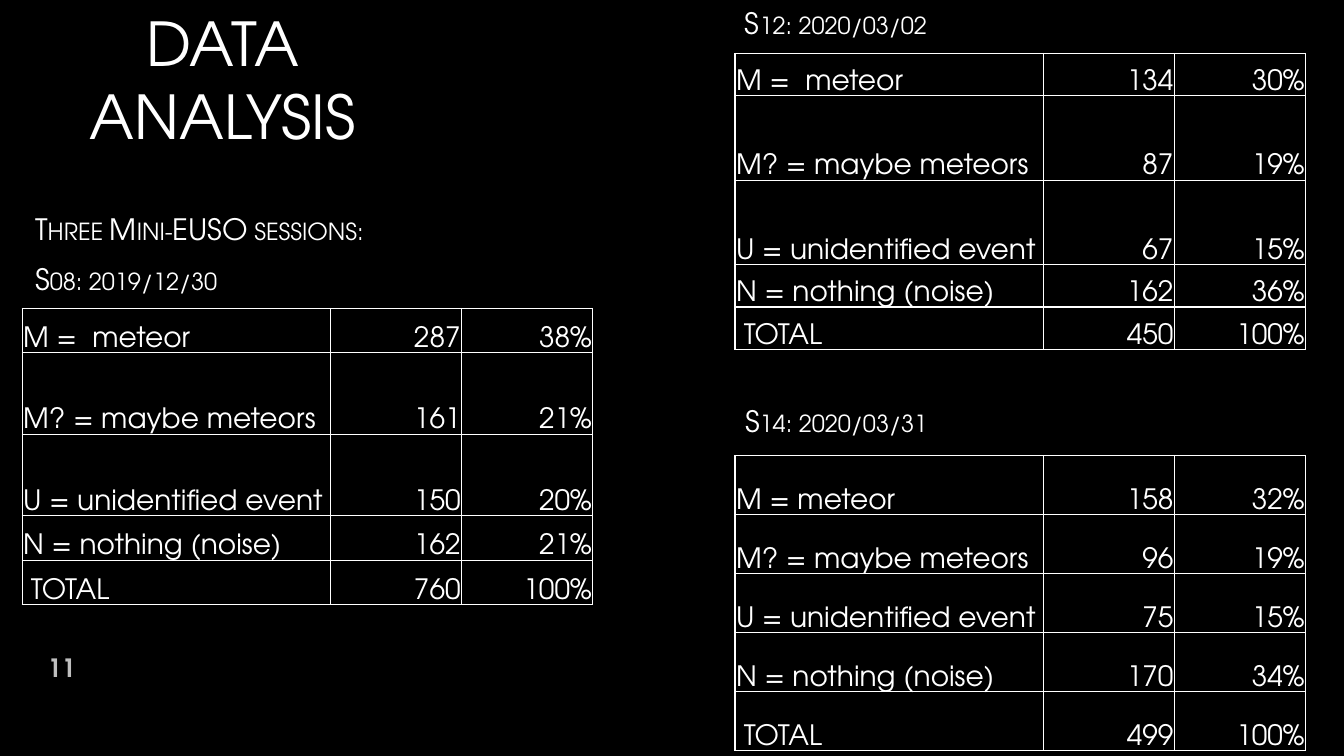
"""Builds the data analysis slide with its three session tables."""
from lxml import etree
from pptx import Presentation
from pptx.dml.color import RGBColor
from pptx.enum.text import MSO_ANCHOR, MSO_AUTO_SIZE, PP_ALIGN
from pptx.oxml.ns import qn
from pptx.util import Inches, Pt

LEFT, CENTER, RIGHT = PP_ALIGN.LEFT, PP_ALIGN.CENTER, PP_ALIGN.RIGHT
TOP, MIDDLE, BOTTOM = MSO_ANCHOR.TOP, MSO_ANCHOR.MIDDLE, MSO_ANCHOR.BOTTOM
NO_AUTOFIT = MSO_AUTO_SIZE.NONE
COLORS = {"background": "000000", "text": "FFFFFF", "number": "BFBFBF"}
FONT = "TeX Gyre Adventor"
WIDTH, HEIGHT = Inches(13.33), Inches(7.5)
COLUMN_X = (1.65, 54.69)
CAPTION_X = (1.88, 54.69)
CAPTION_W = 31.28
TABLE_W = 42.46
COLUMN_SHARES = (0.54, 0.23, 0.23)
LABELS = ("M =  meteor", "M? = maybe meteors", "U = unidentified event",
          "N = nothing (noise)", " TOTAL")


def box(x, y, w, h):
    """Turn percentages of the slide into left, top, width and height."""
    return (int(WIDTH * x / 100), int(HEIGHT * y / 100),
            int(WIDTH * w / 100), int(HEIGHT * h / 100))


def style(p, size, align, color="text", bold=False):
    """Align a paragraph and format its runs."""
    p.alignment = align
    for r in p.runs:
        r.font.name = FONT
        r.font.size = Pt(size)
        r.font.bold = bold
        r.font.color.rgb = RGBColor.from_string(COLORS[color])


def place(sp, area, text, anchor):
    """Position a text shape, fill in its text and return its frame."""
    sp.left, sp.top, sp.width, sp.height = box(*area)
    tf = sp.text_frame
    tf.text = text
    tf.word_wrap = True
    tf.auto_size = NO_AUTOFIT
    tf.vertical_anchor = anchor
    return tf


def add_textbox(slide):
    """Add a text box to be placed later."""
    return slide.shapes.add_textbox(0, 0, 0, 0)


def write_caption(sp, area, text):
    """Write session captions in small capitals."""
    for p in place(sp, area, text, TOP).paragraphs:
        style(p, 21, LEFT)
        p.space_before, p.space_after = Pt(4.2), Pt(6)
        for r in p.runs:
            r.font._element.set("cap", "small")


def set_borders(cell):
    """Draw thin lines on all four sides of a cell."""
    tc_pr = cell._tc.get_or_add_tcPr()
    for i, side in enumerate(("lnL", "lnR", "lnT", "lnB")):
        ln = etree.Element(qn(f"a:{side}"), w=str(Pt(1)))
        fill = etree.SubElement(ln, qn("a:solidFill"))
        etree.SubElement(fill, qn("a:srgbClr"), val=COLORS["text"])
        tc_pr.insert(i, ln)


def write_cell(cell, text, align):
    """Fill and format one table cell."""
    cell.text = text
    cell.fill.background()
    cell.vertical_anchor = BOTTOM
    cell.margin_left = cell.margin_top = cell.margin_right = Inches(0.01)
    cell.margin_bottom = 0
    style(cell.text_frame.paragraphs[0], 20, align)
    set_borders(cell)


def add_session_table(slide, x, y, h, row_shares, labels, counts, percents):
    """Add the table of event counts for one session."""
    area = box(x, y, TABLE_W, h)
    table = slide.shapes.add_table(len(labels), len(COLUMN_SHARES), *area).table
    table.first_row = table.horz_banding = False
    for column, share in zip(table.columns, COLUMN_SHARES):
        column.width = int(area[2] * share)
    for row, share in zip(table.rows, row_shares):
        row.height = int(area[3] * share)
    for i, (label, count, percent) in enumerate(zip(labels, counts, percents)):
        values = (label, str(count), f"{percent}%")
        for j, value in enumerate(values):
            write_cell(table.cell(i, j), value, RIGHT if j else LEFT)


def main():
    """Build and save the slide."""
    prs = Presentation()
    prs.slide_width, prs.slide_height = WIDTH, HEIGHT
    slide = prs.slides.add_slide(prs.slide_layouts[0])
    slide.background.fill.solid()
    slide.background.fill.fore_color.rgb = RGBColor.from_string(COLORS["background"])

    title, subtitle = slide.placeholders
    tf = place(title, (0, 7.2, 33.16, 13.47), "DATA ANALYSIS", BOTTOM)
    style(tf.paragraphs[0], 43.2, CENTER)

    write_caption(subtitle, (CAPTION_X[1], 52.67, CAPTION_W, 7.6), "S14: 2020/03/31")
    write_caption(add_textbox(slide), (CAPTION_X[1], 0, CAPTION_W, 8.13),
                  "S12: 2020/03/02")
    write_caption(add_textbox(slide), (CAPTION_X[0], 27.33, CAPTION_W, 13.47),
                  "Three Mini-EUSO sessions:\nS08: 2019/12/30")

    add_session_table(slide, COLUMN_X[0], 40.8, 39.2, (0.15, 0.275, 0.275, 0.15, 0.15),
                      LABELS, (287, 161, 150, 162, 760), (38, 21, 20, 21, 100))
    add_session_table(slide, COLUMN_X[1], 7.07, 39.2, (0.143, 0.285, 0.285, 0.143, 0.143),
                      LABELS, (134, 87, 67, 162, 450), (30, 19, 15, 36, 100))
    add_session_table(slide, COLUMN_X[1], 60.27, 39.07, (0.2,) * 5,
                      ("M = meteor", *LABELS[1:]),
                      (158, 96, 75, 170, 499), (32, 19, 15, 34, 100))

    tf = place(add_textbox(slide), (CAPTION_X[0], 85.6, 4.5, 5.33), "11", MIDDLE)
    style(tf.paragraphs[0], 18, RIGHT, "number", True)
    prs.save("out.pptx")


if __name__ == "__main__":
    main()
